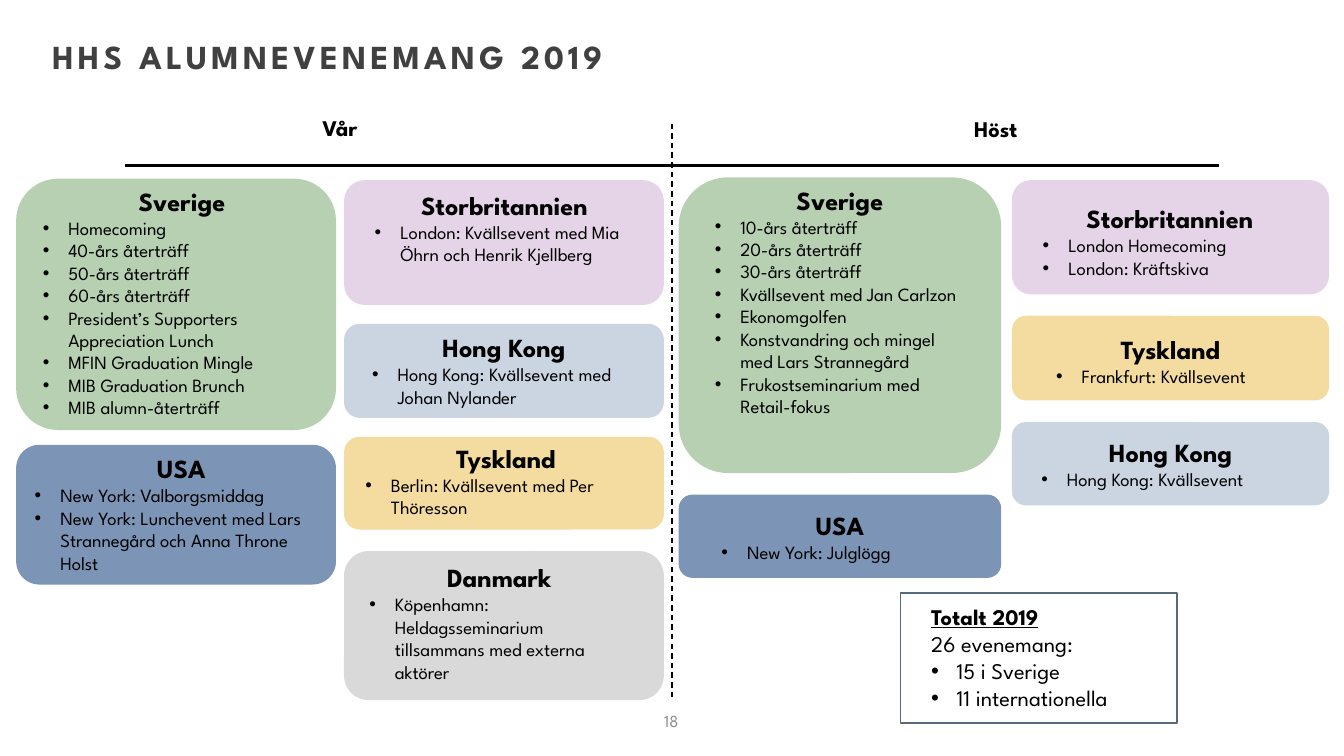
from lxml import etree
from pptx import Presentation
from pptx.dml.color import RGBColor
from pptx.enum.dml import MSO_LINE
from pptx.enum.shapes import MSO_CONNECTOR, MSO_SHAPE
from pptx.enum.text import MSO_ANCHOR, PP_ALIGN
from pptx.oxml.ns import qn
from pptx.util import Inches, Pt

ROUND, RECT = MSO_SHAPE.ROUNDED_RECTANGLE, MSO_SHAPE.RECTANGLE
STRAIGHT, DASH = MSO_CONNECTOR.STRAIGHT, MSO_LINE.DASH
LEFT, CENTER = PP_ALIGN.LEFT, PP_ALIGN.CENTER
TOP, MIDDLE = MSO_ANCHOR.TOP, MSO_ANCHOR.MIDDLE
WIDE = 10
HIGH = WIDE * 9 / 16
FONT, BLACK = "League Spartan", "000000"
INDENT = 0.19

FILLS = {
    "Sverige": "B6D0B1",
    "Storbritannien": "E5D4E7",
    "Hong Kong": "CBD5E2",
    "Tyskland": "F4DBA0",
    "USA": "7C95B6",
    "Danmark": "D9D9D9",
}

# Column: left, width, cards.
# Card: country, top, height, text offset from the card (x, y), text width, events.
COLUMNS = [
    (0.12, 2.38, [
        ("Sverige", 1.33, 1.87, (0.1, 0), 2.27, [
            "Homecoming", "40-års återträff", "50-års återträff",
            "60-års återträff", "President’s Supporters Appreciation Lunch",
            "MFIN Graduation Mingle", "MIB Graduation Brunch",
            "MIB alumn-återträff"]),
        ("USA", 3.31, 1.04, (0.04, 0.01), 2.38, [
            "New York: Valborgsmiddag",
            "New York: Lunchevent med Lars Strannegård och Anna Throne Holst"]),
    ]),
    (2.56, 2.38, [
        ("Storbritannien", 1.34, 0.93, (0.13, 0.02), 2.13,
         ["London: Kvällsevent med Mia Öhrn och Henrik Kjellberg"]),
        ("Hong Kong", 2.41, 0.7, (0.11, 0.01), 2.16,
         ["Hong Kong: Kvällsevent med Johan Nylander"]),
        ("Tyskland", 3.25, 0.69, (0.06, -0.01), 2.29,
         ["Berlin: Kvällsevent med Per Thöresson"]),
        ("Danmark", 4.1, 1.11, (0.09, 0.03), 2.13,
         ["Köpenhamn: Heldagsseminarium tillsammans med externa aktörer"]),
    ]),
    (5.05, 2.4, [
        ("Sverige", 1.32, 2.2, (0.17, 0), 2.06, [
            "10-års återträff", "20-års återträff", "30-års återträff",
            "Kvällsevent med Jan Carlzon", "Ekonomgolfen",
            "Konstvandring och mingel med Lars Strannegård",
            "Frukostseminarium med Retail-fokus"]),
        ("USA", 3.68, 0.62, (0.22, 0.06), 1.96, ["New York: Julglögg"]),
    ]),
    (7.53, 2.36, [
        ("Storbritannien", 1.34, 0.85, (0.13, 0.12), 2.09,
         ["London Homecoming", "London: Kräftskiva"]),
        ("Tyskland", 2.35, 0.63, (0.23, 0.08), 1.9,
         ["Frankfurt: Kvällsevent"]),
        ("Hong Kong", 3.14, 0.62, (0.12, 0.06), 2.12,
         ["Hong Kong: Kvällsevent"]),
    ]),
]
SEASONS = [("Vår", 2.3, 0.8, 0.53), ("Höst", 7.15, 0.81, 0.6)]
TOTALS = ["15 i Sverige", "11 internationella"]


def color(code):
    return RGBColor.from_string(code)


def add_box(kind, left, top, width, height, fill, edge=None):
    box = slide.shapes.add_shape(
        kind, *map(Inches, (left, top, width, height)))
    box.shadow.inherit = False
    box.fill.solid()
    box.fill.fore_color.rgb = color(fill)
    if edge:
        box.line.color.rgb = color(edge)
        box.line.width = Pt(1)
    else:
        box.line.fill.background()


def add_text(left, top, width, height, inset=True, anchor=TOP):
    frame = slide.shapes.add_textbox(
        *map(Inches, (left, top, width, height))).text_frame
    frame.word_wrap = True
    frame.vertical_anchor = anchor
    if not inset:
        frame.margin_left = frame.margin_right = 0
        frame.margin_top = frame.margin_bottom = 0
    return frame


def write(frame, text, size, bold=False, align=LEFT, tint=BLACK, bullet=False):
    """Fill the first empty paragraph, or add one, and return it."""
    para = frame.paragraphs[0] if not frame.text else frame.add_paragraph()
    para.text = text
    para.alignment = align
    if bullet:
        props = para._p.get_or_add_pPr()
        props.set("marL", str(Inches(INDENT)))
        props.set("indent", str(-Inches(INDENT)))
        etree.SubElement(props, qn("a:buFont")).set("typeface", "Arial")
        etree.SubElement(props, qn("a:buChar")).set("char", "•")
    font = para.font
    font.name, font.size, font.bold = FONT, Pt(size), bold
    font.color.rgb = color(tint)
    return para


def add_line(x1, y1, x2, y2, weight, dash=None):
    line = slide.shapes.add_connector(
        STRAIGHT, *map(Inches, (x1, y1, x2, y2)))
    line.line.color.rgb = color(BLACK)
    line.line.width = Pt(weight)
    if dash:
        line.line.dash_style = dash
    etree.SubElement(line._element.spPr, qn("a:effectLst"))


deck = Presentation()
deck.slide_width, deck.slide_height = Inches(WIDE), Inches(HIGH)
slide = deck.slides.add_slide(deck.slide_layouts[6])

title = write(add_text(0.39, 0.3, 9.22, 0.58, inset=False),
              "HHS ALUMNEVENEMANG 2019", 18, bold=True, tint="404040")
title.line_spacing = 0.9
title.runs[0]._r.get_or_add_rPr().set("spc", "220")
write(add_text(4.7, 5.21, 0.59, 0.3, inset=False, anchor=MIDDLE),
      "18", 9, align=CENTER, tint="8C8C8C")

for name, left, top, width in SEASONS:
    write(add_text(left, top, width, 0.3), name, 12, bold=True)
add_line(0.93, 1.23, WIDE - 0.93, 1.23, 1.5)
add_line(WIDE / 2, 0.92, WIDE / 2, 5.21, 0.75, DASH)

for left, width, cards in COLUMNS:
    for country, top, height, (dx, dy), span, events in cards:
        add_box(ROUND, left, top, width, height, FILLS[country])
        frame = add_text(left + dx, top + dy, span, height - dy)
        write(frame, country, 14, bold=True, align=CENTER)
        for event in events:
            write(frame, event, 10, bullet=True)

add_box(RECT, 6.7, 4.41, 2.06, 0.97, "FFFFFF", edge="58697E")
total = add_text(6.83, 4.44, 2.18, 0.91)
write(total, "Totalt 2019", 12, bold=True).font.underline = True
write(total, "26 evenemang:", 12)
for item in TOTALS:
    write(total, item, 12, bullet=True)

deck.save("out.pptx")
